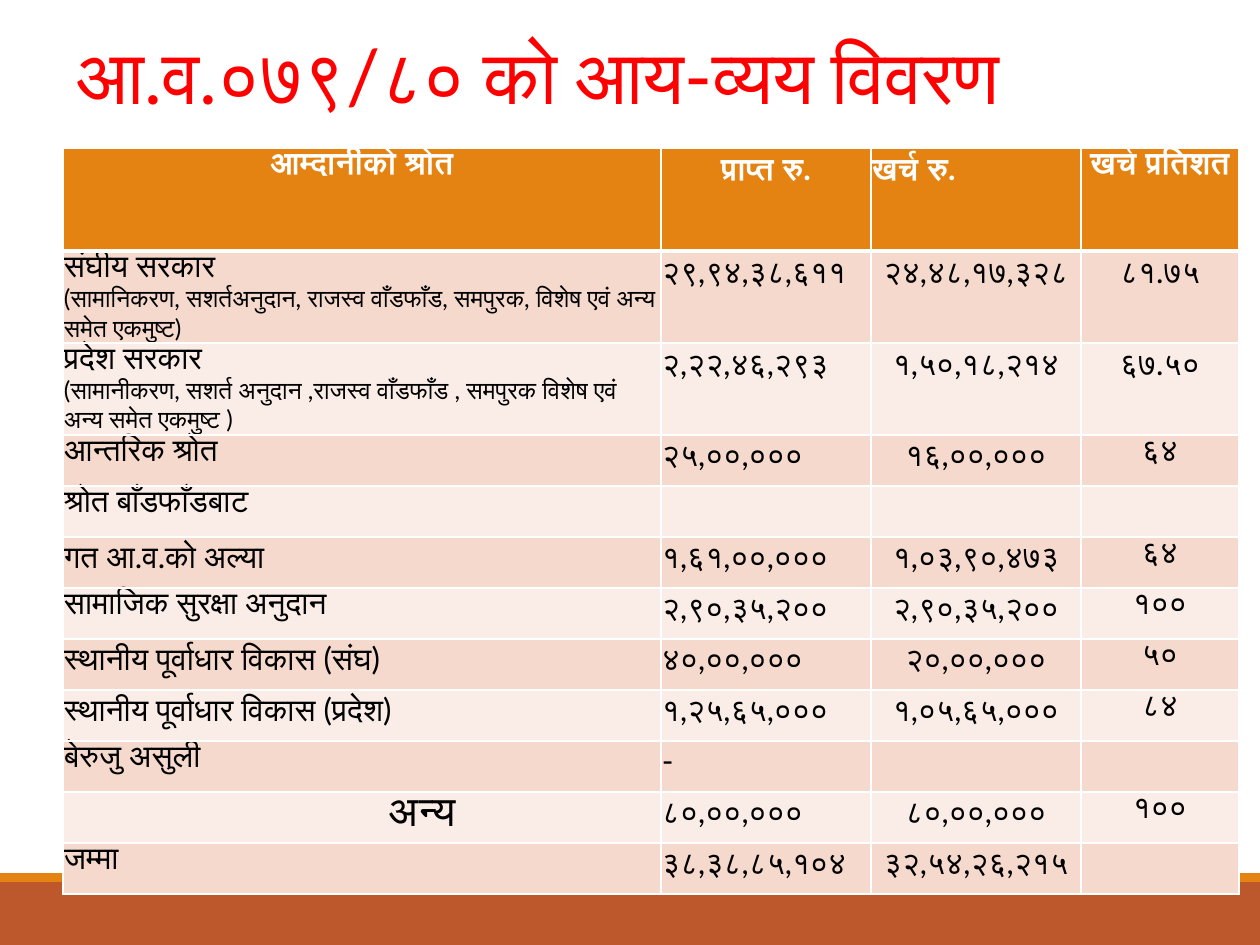
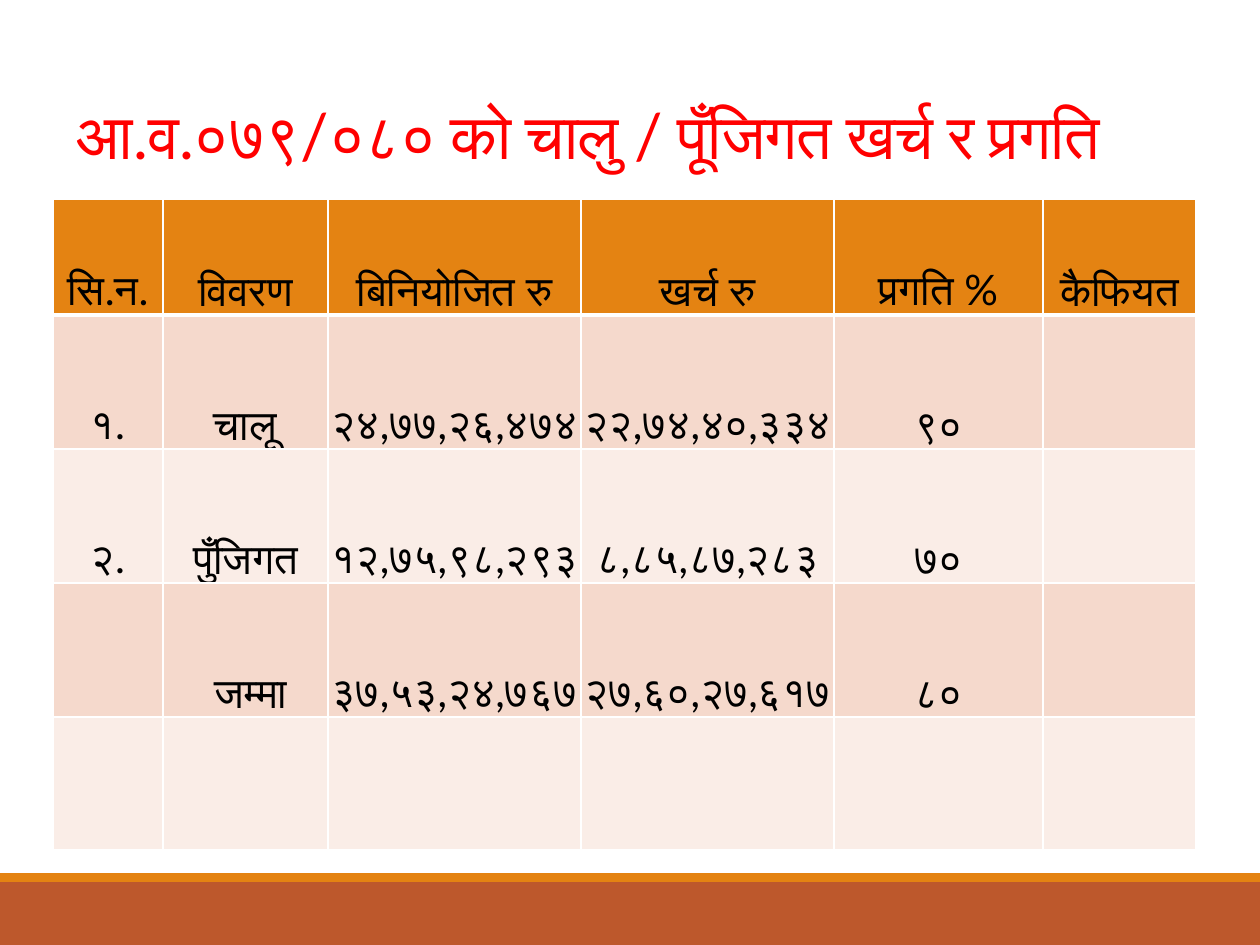
from dataclasses import dataclass, field
from typing import Any

from lxml import etree
from pptx import Presentation
from pptx.dml.color import RGBColor
from pptx.enum.shapes import MSO_SHAPE
from pptx.enum.text import MSO_ANCHOR, MSO_AUTO_SIZE, PP_ALIGN
from pptx.oxml.ns import qn
from pptx.util import Emu, Pt

# Shared look
PX = 914400 / 126
FONT = "Lato"
RED = RGBColor(0xFF, 0x00, 0x00)
BLACK = RGBColor(0x00, 0x00, 0x00)
WHITE = RGBColor(0xFF, 0xFF, 0xFF)
ORANGE = RGBColor(0xE4, 0x83, 0x12)
RUST = RGBColor(0xBD, 0x58, 0x2C)
DARK_ROW = RGBColor(0xF5, 0xD9, 0xCC)
LIGHT_ROW = RGBColor(0xFA, 0xED, 0xE7)
LEFT, CENTER = PP_ALIGN.LEFT, PP_ALIGN.CENTER
TOP, BOTTOM = MSO_ANCHOR.TOP, MSO_ANCHOR.BOTTOM
NO_FIT = MSO_AUTO_SIZE.NONE
RECTANGLE = MSO_SHAPE.RECTANGLE
TITLE_ONLY = 5
NOTE_SIZE = 14


@dataclass(frozen=True)
class Band:
    top: int
    height: int
    color: RGBColor


@dataclass(frozen=True)
class Title:
    text: str
    height: int
    size: float


@dataclass(frozen=True)
class Grid:
    left: int
    top: int
    columns: list[int]
    heights: list[int]
    rows: list[list[str]]
    size: int
    anchor: Any
    header_color: RGBColor
    header_bold: bool
    header_aligns: list[Any]
    body_aligns: list[Any]
    sizes: dict[tuple[int, int], int] = field(default_factory=dict)
    indents: dict[tuple[int, int], int] = field(default_factory=dict)


BANDS = [Band(882, 63, RUST), Band(873, 9, ORANGE)]

INCOME_TITLE = Title("आ.व.०७९/८० को आय-व्यय विवरण", 88, 43.2)
INCOME = Grid(
    left=63, top=148,
    columns=[598, 210, 210, 158],
    heights=[103] + [92] * 2 + [51] * 9,
    rows=[
        ["आम्दानीको श्रोत", "प्राप्त रु.", "खर्च रु.", "खर्च प्रतिशत"],
        ["संघीय सरकार\n(सामानिकरण, सशर्तअनुदान, राजस्व वाँडफाँड, समपुरक, "
         "विशेष एवं अन्य समेत एकमुष्ट)",
         "२९,९४,३८,६११", "२४,४८,१७,३२८", "८१.७५"],
        ["प्रदेश सरकार\n(सामानीकरण, सशर्त अनुदान ,राजस्व वाँडफाँड , समपुरक "
         "विशेष एवं अन्य समेत एकमुष्ट )",
         "२,२२,४६,२९३", "१,५०,१८,२१४", "६७.५०"],
        ["आन्तरिक श्रोत", "२५,००,०००", "१६,००,०००", "६४"],
        ["श्रोत बाँडफाँडबाट", "", "", ""],
        ["गत आ.व.को अल्या", "१,६१,००,०००", "१,०३,९०,४७३", "६४"],
        ["सामाजिक सुरक्षा अनुदान", "२,९०,३५,२००", "२,९०,३५,२००", "१००"],
        ["स्थानीय पूर्वाधार विकास (संघ)", "४०,००,०००", "२०,००,०००", "५०"],
        ["स्थानीय पूर्वाधार विकास (प्रदेश)", "१,२५,६५,०००", "१,०५,६५,०००", "८४"],
        ["बेरुजु असुली", "-", "", ""],
        ["अन्य", "८०,००,०००", "८०,००,०००", "१००"],
        ["जम्मा", "३८,३८,८५,१०४", "३२,५४,२६,२१५", ""],
    ],
    size=18, anchor=TOP,
    header_color=WHITE, header_bold=True,
    header_aligns=[CENTER, CENTER, LEFT, CENTER],
    body_aligns=[LEFT, LEFT, CENTER, CENTER],
    sizes={(10, 0): 24},
    indents={(10, 0): 326},
)

SPENDING_TITLE = Title("आ.व.०७९/०८० को चालु / पूँजिगत खर्च र प्रगति", 141, 36)
SPENDING = Grid(
    left=53, top=199,
    columns=[110, 165, 253, 253, 209, 153],
    heights=[116] + [134] * 3 + [133],
    rows=[
        ["सि.न.", "विवरण", "बिनियोजित रु", "खर्च रु", "प्रगति %", "कैफियत"],
        ["१.", "चालू", "२४,७७,२६,४७४", "२२,७४,४०,३३४", "९०", ""],
        ["२.", "पुँजिगत", "१२,७५,९८,२९३", "८,८५,८७,२८३", "७०", ""],
        ["", "जम्मा", "३७,५३,२४,७६७", "२७,६०,२७,६१७", "८०", ""],
        [""] * 6,
    ],
    size=24, anchor=BOTTOM,
    header_color=BLACK, header_bold=False,
    header_aligns=[CENTER] * 6,
    body_aligns=[CENTER] * 6,
    indents={(3, 1): 12},
)


def px(length: int) -> Emu:
    return Emu(round(length * PX))


def apply(target: Any, values: dict[str, Any]) -> None:
    for name, value in values.items():
        setattr(target, name, value)


def write(para: Any, text: str, size: float, color: RGBColor, bold: bool) -> Any:
    span = para.add_run()
    span.text = text
    apply(span.font, {"name": FONT, "size": Pt(size), "bold": bold})
    span.font.color.rgb = color
    return span


def add_band(page: Any, width: int, band: Band) -> None:
    box = page.shapes.add_shape(RECTANGLE, 0, px(band.top), width, px(band.height))
    box.shadow.inherit = False
    box.fill.solid()
    box.fill.fore_color.rgb = band.color
    box.line.fill.background()


def add_title(page: Any, title: Title) -> None:
    box = page.shapes.title
    apply(box, {"left": px(63), "top": px(38),
                "width": px(1134), "height": px(title.height)})
    apply(box.text_frame, {"vertical_anchor": BOTTOM, "word_wrap": True,
                           "auto_size": NO_FIT})
    para = box.text_frame.paragraphs[0]
    apply(para, {"alignment": LEFT, "line_spacing": 0.85})
    span = write(para, title.text, title.size, RED, False)
    span.font._element.set("spc", "-50")


def add_borders(cell: Any, row: int) -> None:
    widths = {"a:lnL": 1, "a:lnR": 1,
              "a:lnT": 3 if row == 1 else 1, "a:lnB": 3 if row == 0 else 1}
    properties = cell._tc.get_or_add_tcPr()
    for side, width in widths.items():
        line = etree.SubElement(properties, qn(side), w=str(Pt(width)))
        fill = etree.SubElement(line, qn("a:solidFill"))
        etree.SubElement(fill, qn("a:srgbClr"), val=str(WHITE))


def fill_cell(cell: Any, grid: Grid, row: int, column: int) -> None:
    header = row == 0
    place = (row, column)
    apply(cell, {"margin_left": px(grid.indents.get(place, 1)),
                 "margin_right": px(1), "margin_top": px(1),
                 "margin_bottom": 0, "vertical_anchor": grid.anchor})
    add_borders(cell, row)
    cell.fill.solid()
    cell.fill.fore_color.rgb = (
        ORANGE if header else DARK_ROW if row % 2 else LIGHT_ROW)

    # A second line in a cell is a smaller note
    text = grid.rows[row][column]
    aligns = grid.header_aligns if header else grid.body_aligns
    for index, line in enumerate(text.split("\n") if text else []):
        frame = cell.text_frame
        para = frame.add_paragraph() if index else frame.paragraphs[0]
        para.alignment = aligns[column]
        size = NOTE_SIZE if index else grid.sizes.get(place, grid.size)
        write(para, line, size, grid.header_color if header else BLACK,
              header and grid.header_bold)


def add_grid(page: Any, grid: Grid) -> None:
    table = page.shapes.add_table(
        len(grid.heights), len(grid.columns), px(grid.left), px(grid.top),
        px(sum(grid.columns)), px(sum(grid.heights))).table
    for column, width in zip(table.columns, grid.columns):
        column.width = px(width)
    for row, height in enumerate(grid.heights):
        table.rows[row].height = px(height)
        for column in range(len(grid.columns)):
            fill_cell(table.cell(row, column), grid, row, column)


def main() -> None:
    deck = Presentation()
    apply(deck, {"slide_width": px(1260), "slide_height": px(945)})
    for title, grid in [(INCOME_TITLE, INCOME), (SPENDING_TITLE, SPENDING)]:
        page = deck.slides.add_slide(deck.slide_layouts[TITLE_ONLY])
        for band in BANDS:
            add_band(page, deck.slide_width, band)
        add_title(page, title)
        add_grid(page, grid)
    deck.save("out.pptx")


if __name__ == "__main__":
    main()
